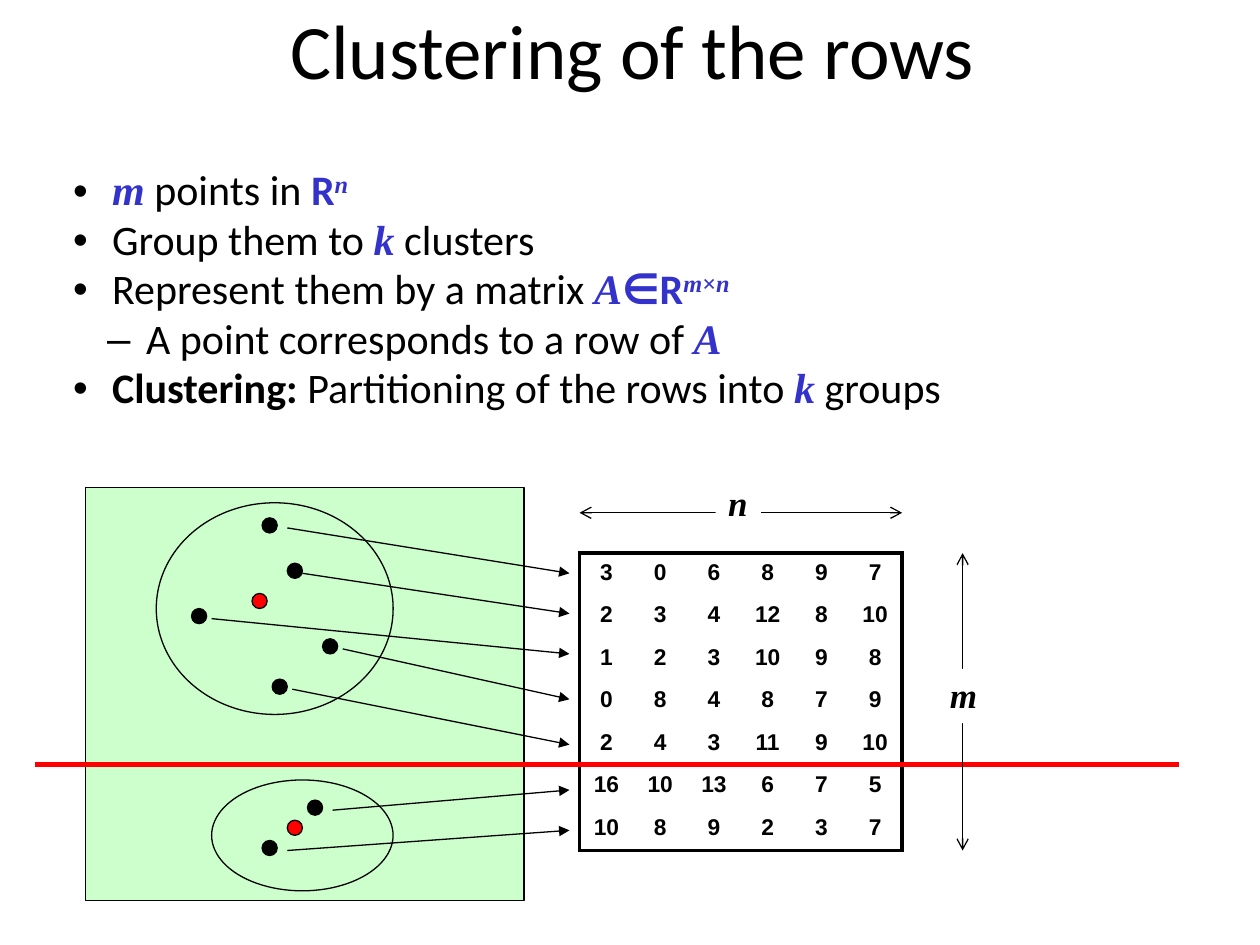
"""Build a slide on clustering the rows of a matrix."""
from dataclasses import dataclass

from lxml import etree
from pptx import Presentation
from pptx.dml.color import RGBColor
from pptx.enum.shapes import MSO_CONNECTOR, MSO_SHAPE
from pptx.enum.text import MSO_ANCHOR, PP_ALIGN
from pptx.oxml.ns import qn
from pptx.util import Inches, Pt

RECT, OVAL = MSO_SHAPE.RECTANGLE, MSO_SHAPE.OVAL
LINE = MSO_CONNECTOR.STRAIGHT
TOP, MIDDLE = MSO_ANCHOR.TOP, MSO_ANCHOR.MIDDLE
LEFT, CENTER = PP_ALIGN.LEFT, PP_ALIGN.CENTER
BLACK, WHITE, RED, BLUE, GREEN = "000000", "FFFFFF", "FF0000", "3333CC", "CCFFCC"
SANS, SERIF, PLAIN = "Calibri", "Times New Roman", "Arial"
MATH = dict(font=SERIF, hue=BLUE, bold=True, slant=True)
SPACE = dict(hue=BLUE, bold=True)
POWER = dict(MATH, base=30)
LABEL = dict(size=20, font=SERIF, bold=True, slant=True)
DOT = 0.12
EDGE = 4.52


@dataclass
class Point:
    """A data point, the gap to its arrow and the height of the arrow tip."""
    x: float
    y: float
    gap: float
    tip: float


POINTS = [
    Point(2.08, 4.11, 0.2, 4.55),
    Point(2.28, 4.47, 0.12, 4.87),
    Point(1.52, 4.83, 0.16, 5.19),
    Point(2.56, 5.07, 0.16, 5.55),
    Point(2.16, 5.39, 0.16, 5.91),
    Point(2.44, 6.35, 0.2, 6.27),
    Point(2.08, 6.67, 0.2, 6.59),
]
MEANS = [(2, 4.71), (2.28, 6.51)]
GROUPS = [(1.24, 3.99, 1.88, 1.68), (1.68, 6.19, 1.44, 0.88)]
ROWS = [
    [3, 0, 6, 8, 9, 7],
    [2, 3, 4, 12, 8, 10],
    [1, 2, 3, 10, 9, 8],
    [0, 8, 4, 8, 7, 9],
    [2, 4, 3, 11, 9, 10],
    [16, 10, 13, 6, 7, 5],
    [10, 8, 9, 2, 3, 7],
]
LIST = [
    (0, [("m", MATH), (" points in ", {}), ("R", SPACE), ("n", POWER)]),
    (0, [("Group them to ", {}), ("k", MATH), (" clusters", {})]),
    (0, [("Represent them by a matrix ", {}), ("A", MATH), ("∈R", SPACE),
         ("m", POWER), ("×", dict(POWER, slant=False)), ("n", POWER)]),
    (1, [("A point corresponds to a row of ", {}), ("A", MATH)]),
    (0, [("Clustering:", dict(bold=True)), (" Partitioning of the rows into ", {}),
         ("k", MATH), (" groups", {})]),
]


def tint(hue: str) -> RGBColor:
    """Turn a hex string into a colour."""
    return RGBColor.from_string(hue)


def write(para, text: str, size: float = 24, font: str = SANS, hue: str = BLACK,
          bold: bool = False, slant: bool = False, base: int = 0) -> None:
    """Add a run of text with its format."""
    run = para.add_run()
    run.text = text
    face = run.font
    face.size, face.name, face.bold, face.italic = Pt(size), font, bold, slant
    face.color.rgb = tint(hue)
    if base:
        run._r.get_or_add_rPr().set("baseline", str(base * 1000))


def place(item, x: float, y: float, w: float, h: float) -> None:
    """Move and size a placeholder."""
    item.left, item.top, item.width, item.height = map(Inches, (x, y, w, h))


def draw(slide, kind, x: float, y: float, w: float, h: float,
         fill: str = "", edge: str = BLACK):
    """Add a shape, hollow without a fill and bare without an edge."""
    item = slide.shapes.add_shape(kind, *map(Inches, (x, y, w, h)))
    item.shadow.inherit = False
    if fill:
        item.fill.solid()
        item.fill.fore_color.rgb = tint(fill)
    else:
        item.fill.background()
    if edge:
        item.line.color.rgb = tint(edge)
        item.line.width = Pt(0.75)
    else:
        item.line.fill.background()
    return item


def link(slide, x: float, y: float, to_x: float, to_y: float, hue: str = BLACK,
         width: float = 0.75, head: str = "", tail: str = "") -> None:
    """Add a straight line with optional arrowheads."""
    item = slide.shapes.add_connector(LINE, *map(Inches, (x, y, to_x, to_y)))
    item.line.color.rgb = tint(hue)
    item.line.width = Pt(width)
    for tag, tip in (("a:headEnd", head), ("a:tailEnd", tail)):
        if tip:
            etree.SubElement(item.line._get_or_add_ln(), qn(tag), type=tip)
    etree.SubElement(item._element.spPr, qn("a:effectLst"))


def label(slide, text: str, x: float, y: float, w: float, h: float) -> None:
    """Add a white tag that breaks a measure line."""
    frame = draw(slide, RECT, x, y, w, h, WHITE, "").text_frame
    frame.vertical_anchor, frame.margin_bottom = MIDDLE, Inches(0.08)
    frame.paragraphs[0].alignment = LEFT
    write(frame.paragraphs[0], text, **LABEL)


def fill_list(body) -> None:
    """Write the bullet list."""
    frame = body.text_frame
    frame.vertical_anchor = TOP
    for i, (level, runs) in enumerate(LIST):
        para = frame.paragraphs[0] if i == 0 else frame.add_paragraph()
        para.level = level
        para.line_spacing, para.space_before = 0.98, Pt(0)
        props = para._p.get_or_add_pPr()
        props.set("marL", str(Inches(0.31 + 0.27 * level)))
        props.set("indent", str(-Inches(0.31)))
        mark = etree.SubElement(props, qn("a:buClr"))
        etree.SubElement(mark, qn("a:srgbClr"), val=BLACK)
        for text, form in runs:
            write(para, text, **form)


def border(cell, side: str, outer: bool) -> None:
    """Give one side of a cell a thick black line, or none inside."""
    props = cell._tc.get_or_add_tcPr()
    line = etree.SubElement(props, qn("a:ln" + side), w=str(Pt(2.25)))
    if outer:
        fill = etree.SubElement(line, qn("a:solidFill"))
        etree.SubElement(fill, qn("a:srgbClr"), val=BLACK)
    else:
        etree.SubElement(line, qn("a:noFill"))


def matrix(slide) -> None:
    """Add the matrix as a table framed on its outer sides."""
    high, wide = len(ROWS), len(ROWS[0])
    grid = slide.shapes.add_table(high, wide, *map(Inches, (4.6, 4.39, 2.56, 2.36))).table
    grid.first_row = grid.horz_banding = False
    for r, row in enumerate(ROWS):
        for c, value in enumerate(row):
            cell = grid.cell(r, c)
            sides = {"L": c == 0, "R": c == wide - 1, "T": r == 0, "B": r == high - 1}
            for side, outer in sides.items():
                border(cell, side, outer)
            cell.fill.background()
            cell.vertical_anchor = MIDDLE
            cell.margin_left = cell.margin_right = Inches(0.02)
            cell.margin_top, cell.margin_bottom = Inches(0.03), Inches(0.06)
            para = cell.text_frame.paragraphs[0]
            para.alignment = CENTER
            write(para, str(value), size=13, font=PLAIN, bold=True)


def main() -> None:
    """Build and save the slide."""
    deck = Presentation()
    deck.slide_width, deck.slide_height = Inches(10), Inches(7.5)
    slide = deck.slides.add_slide(deck.slide_layouts[1])
    title, body = slide.placeholders
    place(title, 0.52, 0, 9, 0.93)
    frame = title.text_frame
    frame.vertical_anchor, frame.margin_bottom = MIDDLE, Inches(0.15)
    frame.paragraphs[0].line_spacing = 0.98
    write(frame.paragraphs[0], "Clustering of the rows", size=44)
    place(body, 0.48, 1.27, 8.27, 2.08)
    fill_list(body)

    draw(slide, RECT, 0.68, 3.87, 3.48, 3.28, GREEN)
    for group in GROUPS:
        draw(slide, OVAL, *group)
    matrix(slide)
    for p in POINTS:
        draw(slide, OVAL, p.x, p.y, DOT, DOT, BLACK)
        link(slide, p.x + p.gap, p.y + 0.08, EDGE, p.tip, tail="triangle")
    for x, y in MEANS:
        draw(slide, OVAL, x, y, DOT, DOT, RED)
    link(slide, 0.28, 6.07, 9.36, 6.07, RED, 3)
    link(slide, 7.64, 4.39, 7.64, 6.75, head="arrow", tail="arrow")
    label(slide, "m", 7.44, 5.31, 0.48, 0.43)
    link(slide, 4.6, 4.07, 7.16, 4.07, head="arrow", tail="arrow")
    label(slide, "n", 5.68, 3.79, 0.36, 0.43)
    deck.save("out.pptx")


if __name__ == "__main__":
    main()
